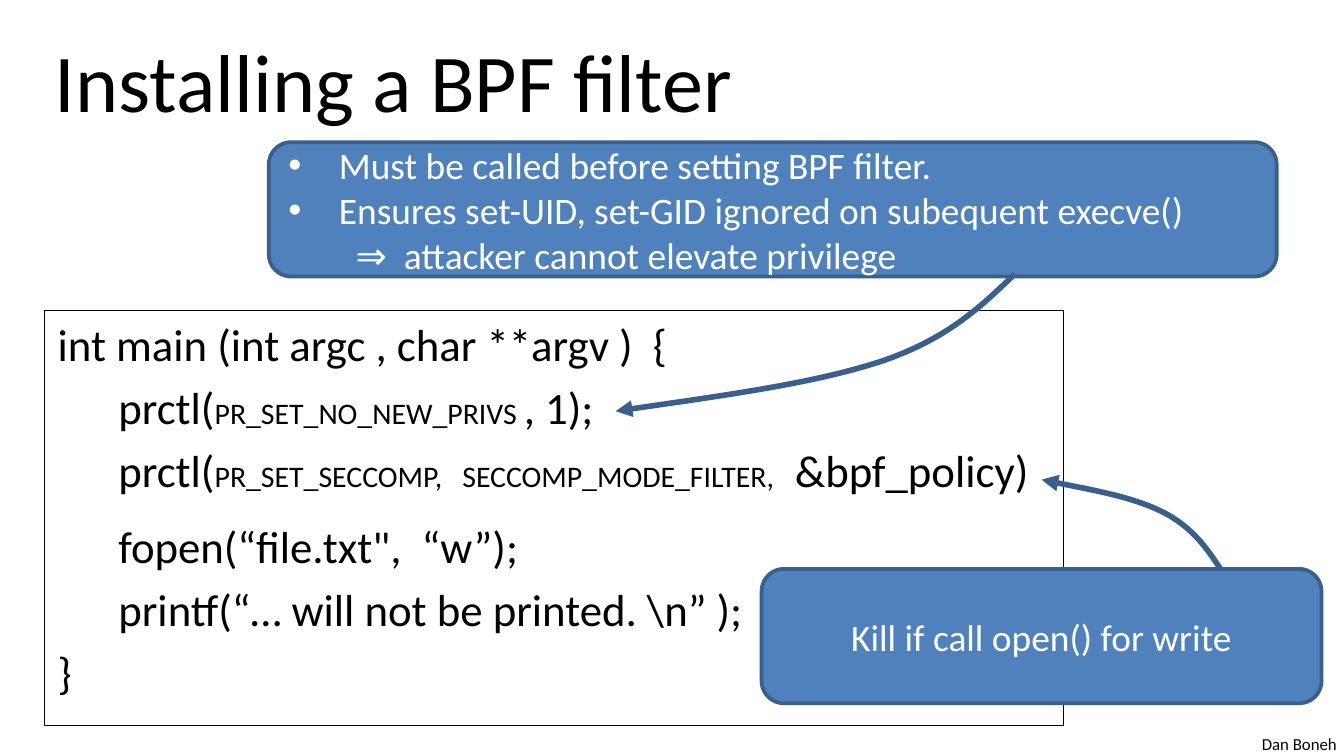
from pptx import Presentation
from pptx.dml.color import RGBColor
from pptx.enum.shapes import MSO_SHAPE as Kind
from pptx.enum.text import MSO_ANCHOR as Anchor, PP_ALIGN as Align
from pptx.oxml.ns import qn
from pptx.util import Pt
from lxml.etree import SubElement

# Content: boxes are left, top, width, height in points
TITLE = "Installing a BPF filter"
AUTHOR = "Dan Boneh"
BIG, SMALL = 24, 16
# Each code line: indent level, space before, runs of (text, size)
CODE = [
    (0, 4.8, [("int main (int argc , char **argv )  {", BIG)]),
    (1, 4.8, [("prctl(", BIG), ("PR_SET_NO_NEW_PRIVS ", SMALL),
              (", 1);", BIG)]),
    (1, 4.8, [("prctl(", BIG),
              ("PR_SET_SECCOMP,   SECCOMP_MODE_FILTER,   ", SMALL),
              ("&bpf_policy)", BIG)]),
    (1, 12.2, [("fopen(“file.txt\",  “w”);", BIG)]),
    (1, 4.8, [("printf(“… will not be printed. \\n” );", BIG)]),
    (0, 4.8, [("}", BIG)]),
]
NOTES = [
    {"box": (144, 76.2, 540, 72), "bullets": True,
     "lines": ["Must be called before setting BPF filter.",
               "Ensures set-UID, set-GID ignored on subequent execve()"
               "\v\t⇒  attacker cannot elevate privilege"],
     "curve": [(543.6, 146.9), (526.3, 163.4), (509, 180.7), (473.8, 193),
               (437.8, 205.2), (383.8, 212.4), (329.8, 220.3)]},
    {"box": (408, 304.8, 300, 72), "bullets": False,
     "lines": ["Kill if call open() for write"],
     "curve": [(653.8, 304.8), (646.6, 293.8), (638.6, 282.2), (622.8, 274.3),
               (607, 266.4), (582.5, 262.1), (558, 257)]},
]
BLACK, WHITE, BLUE, NAVY = "000000", "FFFFFF", "4F81BD", "3A5F8C"
STEP, HANG = 32.5, 27


def paint(target, color):
    target.rgb = RGBColor.from_string(color)


def style(font, size, color):
    for name, value in {"name": "Calibri", "size": Pt(size)}.items():
        setattr(font, name, value)
    paint(font.color, color)


def outline(shape, color, width):
    shape.shadow.inherit = False
    paint_line = shape.line
    paint_line.fill.solid()
    paint(paint_line.color, color)
    paint_line.width = Pt(width)


def label(slide, box, text, size, anchor, wrap):
    frame = slide.shapes.add_textbox(*map(Pt, box)).text_frame
    frame.word_wrap, frame.vertical_anchor = wrap, anchor
    para = frame.paragraphs[0]
    para.text = text
    style(para.runs[0].font, size, BLACK)


def block(slide, kind, box, anchor):
    shape = slide.shapes.add_shape(kind, *map(Pt, box))
    frame = shape.text_frame
    frame.word_wrap, frame.vertical_anchor = True, anchor
    return shape, frame


def lines(frame, items):
    """Yield one paragraph for each item."""
    for i, item in enumerate(items):
        yield frame.add_paragraph() if i else frame.paragraphs[0], item


def bullet(para):
    props = para._p.get_or_add_pPr()
    props.set("marL", str(Pt(HANG)))
    props.set("indent", str(-Pt(HANG)))
    SubElement(props, qn("a:buFont"), typeface="Arial")
    SubElement(props, qn("a:buChar"), char="•")


def arrow(slide, points):
    """Draw a curve through Bezier points, with a head at its end."""
    spots = [(Pt(x), Pt(y)) for x, y in points]
    build = slide.shapes.build_freeform(*spots[0])
    build.add_line_segments(spots[1:], close=False)
    shape = build.convert_to_shape()
    shape.fill.background()
    outline(shape, NAVY, 3)
    # Join every three straight steps into one cubic curve
    track = next(shape._element.iter(qn("a:path")))
    steps = track.findall(qn("a:lnTo"))
    for i in range(0, len(steps), 3):
        cubic = SubElement(track, qn("a:cubicBezTo"))
        for step in steps[i:i + 3]:
            cubic.append(step[0])
            track.remove(step)
    SubElement(shape.line._get_or_add_ln(), qn("a:tailEnd"), type="triangle")


def note(slide, item):
    shape, frame = block(slide, Kind.ROUNDED_RECTANGLE, item["box"],
                         Anchor.MIDDLE)
    shape.fill.solid()
    paint(shape.fill.fore_color, BLUE)
    outline(shape, NAVY, 2)
    for para, text in lines(frame, item["lines"]):
        para.text = text
        para.alignment = Align.LEFT if item["bullets"] else Align.CENTER
        for run in para.runs:
            style(run.font, 20, WHITE)
        if item["bullets"]:
            bullet(para)
    arrow(slide, item["curve"])


def code(slide):
    shape, frame = block(slide, Kind.RECTANGLE, (23.8, 166.3, 545.8, 222.5),
                         Anchor.TOP)
    shape.fill.background()
    outline(shape, BLACK, 0.75)
    for para, (level, gap, parts) in lines(frame, CODE):
        para.alignment, para.space_before = Align.LEFT, Pt(gap)
        para._p.get_or_add_pPr().set("marL", str(Pt(level * STEP)))
        for text, size in parts:
            run = para.add_run()
            run.text = text
            style(run.font, size, BLACK)


def main():
    deck = Presentation()
    deck.slide_width, deck.slide_height = Pt(720), Pt(405)
    slide = deck.slides.add_slide(deck.slide_layouts[6])
    label(slide, (668.9, 389.5, 54.7, 18), AUTHOR, 9, Anchor.TOP, False)
    label(slide, (22.3, 8.6, 648, 67.7), TITLE, 44, Anchor.MIDDLE, True)
    code(slide)
    for item in NOTES:
        note(slide, item)
    deck.save("out.pptx")


if __name__ == "__main__":
    main()
